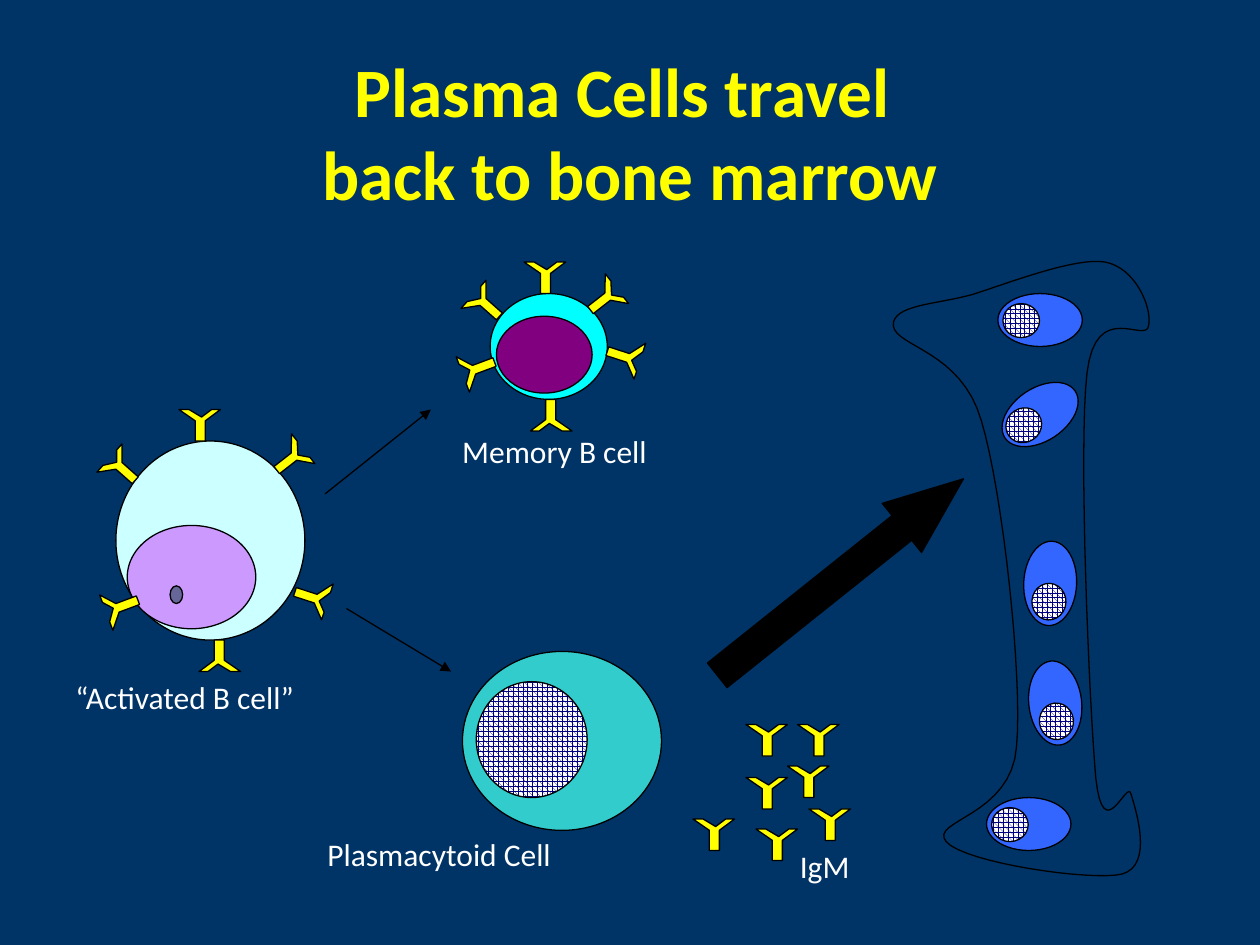
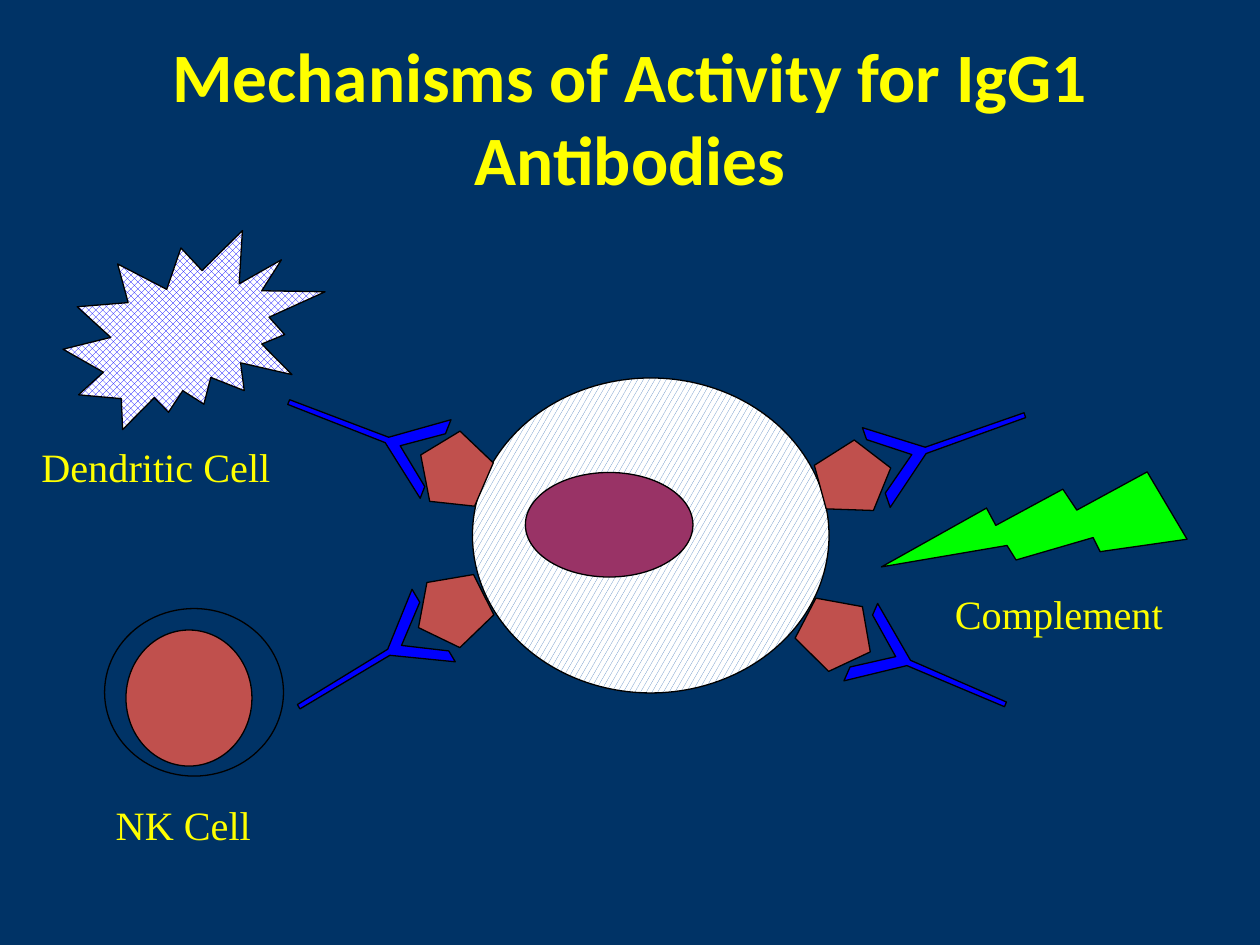
from pptx import Presentation
from pptx.dml.color import RGBColor
from pptx.enum.dml import MSO_PATTERN
from pptx.enum.shapes import MSO_CONNECTOR, MSO_SHAPE
from pptx.enum.text import MSO_ANCHOR, MSO_AUTO_SIZE, PP_ALIGN
from pptx.oxml.ns import qn
from pptx.util import Pt
from lxml.etree import SubElement

PX = 9144
NAVY, YELLOW, WHITE, BLACK = "003366", "FFFF00", "FFFFFF", "000000"
BRICK, ANTIBODY_BLUE, MARROW_BLUE = "C0504D", "0000FF", "3366FF"
CHROMATIN = (MSO_PATTERN.SPHERE, "000080", WHITE)
MEMBRANE = (MSO_PATTERN.LARGE_CONFETTI, "4F81BD", WHITE)
DENDRITES = (MSO_PATTERN.SOLID_DIAMOND, "0000FF", WHITE)
RECEPTOR = [(0, 0), (13, 9), (13, 25), (21, 25), (21, 9), (33, 0), (26, 0), (18, 6), (8, 0)]
ANTIBODY = [(0, 0), (31, 41), (32, 125), (36, 125), (36, 42), (67, 0), (57, 0), (34, 30), (12, 0)]
TITLE_FONT = {"name": "Calibri", "size": Pt(39.6), "bold": True}


def paint(fill, colour):
    if colour is None:
        fill.background()
    elif isinstance(colour, tuple):
        fill.patterned()
        fill.pattern, front, back = colour
        fill.fore_color.rgb = RGBColor.from_string(front)
        fill.back_color.rgb = RGBColor.from_string(back)
    else:
        fill.solid()
        fill.fore_color.rgb = RGBColor.from_string(colour)


def draw(slide, kind, box, colour, rotation=0):
    x, y, width, height = box
    if isinstance(kind, list):
        across = max(px for px, py in kind)
        down = max(py for px, py in kind)
        points = [((x + px * width / across) * PX, (y + py * height / down) * PX) for px, py in kind]
        builder = slide.shapes.build_freeform(*points[0])
        builder.add_line_segments(points[1:], close=True)
        shape = builder.convert_to_shape()
    else:
        shape = slide.shapes.add_shape(kind, *[side * PX for side in box])
    shape.rotation = rotation
    shape.shadow.inherit = False
    paint(shape.fill, colour)
    paint(shape.line.fill, BLACK)
    shape.line.width = Pt(0.75)
    return shape


prs = Presentation()
prs.slide_width, prs.slide_height = 1000 * PX, 750 * PX
paint(prs.slide_master.background.fill, NAVY)

slides = []
for text, box in [
    ("Plasma Cells travel \vback to bone marrow", (75, 42, 850, 125)),
    ("Mechanisms of Activity for IgG1 Antibodies", (50, 30, 900, 125)),
]:
    slide = prs.slides.add_slide(prs.slide_layouts[5])
    title = slide.shapes.title
    title.left, title.top, title.width, title.height = [side * PX for side in box]
    title.text_frame.text = text
    title.text_frame.auto_size = MSO_AUTO_SIZE.NONE
    title.text_frame.vertical_anchor = MSO_ANCHOR.MIDDLE
    paragraph = title.text_frame.paragraphs[0]
    paragraph.alignment = PP_ALIGN.CENTER
    for run in paragraph.runs:
        for name, value in TITLE_FONT.items():
            setattr(run.font, name, value)
        paint(run.font.fill, YELLOW)
    slides.append(slide)
marrow, mechanisms = slides

for box, colour in [
    ((389, 233, 93, 84), "00FFFF"),
    ((394, 251, 76, 61), "800080"),
    ((92, 350, 150, 158), "CCFFFF"),
    ((101, 417, 102, 82), "CC99FF"),
    ((135, 465, 10, 14), "666699"),
    ((367, 517, 158, 142), "33CCCC"),
    ((378, 541, 88, 92), CHROMATIN),
]:
    draw(marrow, MSO_SHAPE.OVAL, box, colour)

receptor_poses = [(33, 25, 0), (30, 27, 52), (30, 27, 108), (33, 25, 180), (30, 27, 249.5), (30, 27, 311.6)]
memory_receptors = [(416, 208), (464, 224), (480, 269), (421, 317), (365, 279), (371, 229)]
activated_receptors = [(142, 325), (215, 351), (232, 460), (158, 508), (82, 468), (82, 359)]
for receptors in (memory_receptors, activated_receptors):
    for (x, y), (width, height, rotation) in zip(receptors, receptor_poses):
        draw(marrow, RECEPTOR, (x, y, width, height), YELLOW, rotation)

for x, y in [(592, 575), (592, 617), (625, 608), (642, 642), (600, 658), (633, 575), (550, 650)]:
    draw(marrow, RECEPTOR, (x, y, 33, 25), YELLOW)

bone_start = (64, 30)
bone_curves = [
    [(36, 38), (0, 38), (1, 55)],
    [(3, 72), (55, 75), (71, 131)],
    [(88, 188), (104, 336), (99, 392)],
    [(95, 448), (29, 451), (43, 468)],
    [(57, 485), (159, 500), (183, 494)],
    [(208, 487), (194, 443), (190, 430)],
    [(187, 417), (168, 474), (162, 417)],
    [(157, 361), (148, 154), (155, 93)],
    [(162, 33), (202, 70), (204, 55)],
    [(207, 40), (193, 8), (169, 4)],
    [(146, 0), (92, 21), (64, 30)],
]
bone = [bone_start]
for first, second, end in bone_curves:
    start = bone[-1]
    for step in range(1, 17):
        t = step / 16
        weights = ((1 - t) ** 3, 3 * t * (1 - t) ** 2, 3 * t * t * (1 - t), t ** 3)
        bone.append(tuple(sum(w * p[axis] for w, p in zip(weights, (start, first, second, end))) for axis in (0, 1)))
draw(marrow, bone, (708, 204, 204, 491), None)

for cell, nucleus, rotation in [
    ((804, 537), (824, 559), 263.7),
    ((800, 442), (818, 464), 272.6),
    ((792, 308), (798, 324), 326.3),
    ((783, 633), (787, 641), 0),
    ((792, 233), (796, 241), 0),
]:
    draw(marrow, MSO_SHAPE.OVAL, (*cell, 67, 42), MARROW_BLUE, rotation)
    draw(marrow, MSO_SHAPE.OVAL, (*nucleus, 29, 27), CHROMATIN, rotation)

homing = draw(marrow, MSO_SHAPE.RIGHT_ARROW, (542, 433, 250, 50), BLACK, 321.4)
homing.adjustments[1] = 1.25

for ends in [(258, 392, 342, 325), (275, 483, 358, 533)]:
    fate = marrow.shapes.add_connector(MSO_CONNECTOR.STRAIGHT, *[end * PX for end in ends])
    paint(fate.line.fill, BLACK)
    fate.line.width = Pt(0.75)
    SubElement(fate.line._get_or_add_ln(), qn("a:tailEnd"), type="triangle")
    SubElement(fate._element.spPr, qn("a:effectLst"))

for kind, box, colour, rotation in [
    (MSO_SHAPE.OVAL, (375, 300, 283, 250), MEMBRANE, 0),
    (MSO_SHAPE.OVAL, (417, 375, 133, 83), "993366", 0),
    (MSO_SHAPE.LIGHTNING_BOLT, (767, 300, 117, 233), "00FF00", 101.8),
    (MSO_SHAPE.EXPLOSION2, (50, 183, 208, 158), DENDRITES, 0),
    (MSO_SHAPE.OVAL, (83, 483, 142, 133), None, 0),
    (MSO_SHAPE.OVAL, (100, 500, 100, 108), BRICK, 0),
]:
    draw(mechanisms, kind, box, colour, rotation)

for antigen, antigen_turn, antibody, antibody_turn in [
    ((333, 342), 6.2, (254, 279), 111.4),
    ((650, 350), 74.8, (721, 288), 250.8),
    ((636, 475), 117.5, (707, 472), 293.5),
    ((329, 456), 243.2, (257, 466), 59.2),
]:
    draw(mechanisms, MSO_SHAPE.REGULAR_PENTAGON, (*antigen, 58, 58), BRICK, antigen_turn)
    draw(mechanisms, ANTIBODY, (*antibody, 67, 125), ANTIBODY_BLUE, antibody_turn)

cell_font = {"name": "Calibri", "size": Pt(18)}
effector_font = {"name": "Times New Roman", "size": Pt(23)}
for slide, font, colour, height, labels in [
    (marrow, cell_font, WHITE, 40, [
        ("Memory B cell", 357, 338, 168),
        ("“Activated B cell”", 50, 533, 196),
        ("Plasmacytoid Cell", 250, 658, 199),
        ("IgM", 625, 667, 60),
    ]),
    (mechanisms, effector_font, YELLOW, 50, [
        ("Complement", 748, 463, 192),
        ("Dendritic Cell", 23, 346, 210),
        ("NK Cell", 82, 630, 132),
    ]),
]:
    for text, x, y, width in labels:
        frame = slide.shapes.add_textbox(x * PX, y * PX, width * PX, height * PX).text_frame
        frame.word_wrap = False
        frame.auto_size = MSO_AUTO_SIZE.SHAPE_TO_FIT_TEXT
        frame.text = text
        label = frame.paragraphs[0].runs[0].font
        for name, value in font.items():
            setattr(label, name, value)
        paint(label.fill, colour)

prs.save("out.pptx")
